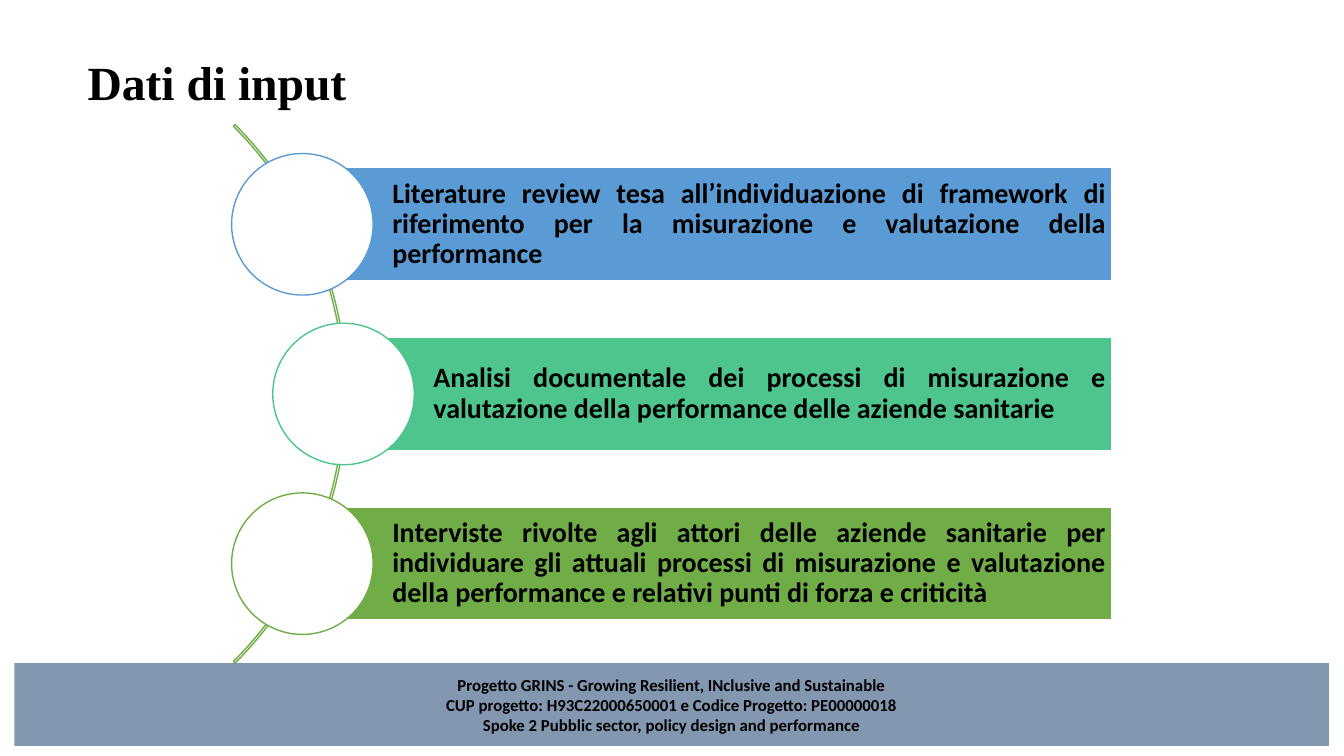
from pptx import Presentation
from pptx import util as u
from pptx.dml.color import RGBColor
from pptx.enum import shapes, text

COLUMNS, ROWS = 32, 18
MIDDLE_ROW, ROW_PITCH = 9.38, 4.04
BAR_RIGHT, BAR_HEIGHT, CIRCLE_SIZE = 26.47, 2.69, 3.37
ARC_CENTRE, ARC_SIZE = -0.82, 18.14

INPUTS = [
    ("Literature review tesa all’individuazione di framework di riferimento "
     "per la misurazione e valutazione della performance", "5B9BD5", 7.2),
    ("Analisi documentale dei processi di misurazione e valutazione della "
     "performance delle aziende sanitarie", "4DC58D", 8.18),
    ("Interviste rivolte agli attori delle aziende sanitarie per individuare "
     "gli attuali processi di misurazione e valutazione della performance e "
     "relativi punti di forza e criticità", "70AD47", 7.2),
]
FOOTER = [
    "Progetto GRINS - Growing Resilient, INclusive and Sustainable",
    "CUP progetto: H93C22000650001 e Codice Progetto: PE00000018",
    "Spoke 2 Pubblic sector, policy design and performance",
]


def colour(value):
    return RGBColor.from_string(value)


class SlideBuilder:
    """Draws styled elements on one slide, measured in grid columns and rows."""

    def __init__(self, presentation):
        self.column = presentation.slide_width / COLUMNS
        self.row = presentation.slide_height / ROWS
        self.slide = presentation.slides.add_slide(presentation.slide_layouts[6])

    def box(self, left, top, width, height):
        return (round(left * self.column), round(top * self.row),
                round(width * self.column), round(height * self.row))

    def shape(self, kind, area, fill=None, line=None):
        shape = self.slide.shapes.add_shape(kind, *self.box(*area))
        shape.shadow.inherit = False
        if fill:
            shape.fill.solid()
            shape.fill.fore_color.rgb = colour(fill)
        else:
            shape.fill.background()
        if line:
            shape.line.color.rgb = colour(line)
            shape.line.width = u.Pt(1)
        else:
            shape.line.fill.background()
        return shape

    def label(self, shape, lines, size, align, font="Calibri", spacing=1.0):
        frame = shape.text_frame
        frame.word_wrap = True
        frame.vertical_anchor = text.MSO_ANCHOR.MIDDLE
        for index, line in enumerate(lines):
            paragraph = frame.add_paragraph() if index else frame.paragraphs[0]
            paragraph.text = line
            paragraph.alignment = align
            paragraph.line_spacing = spacing
            paragraph.font.name = font
            paragraph.font.size = u.Pt(size)
            paragraph.font.bold = True
            paragraph.font.color.rgb = colour("000000")
        return frame

    def title(self, words, area):
        shape = self.slide.shapes.add_textbox(*self.box(*area))
        self.label(shape, [words], 34, text.PP_ALIGN.LEFT, "Times New Roman", 0.9)

    def arc(self, centre, middle, size, line):
        area = (centre - size / 2, middle - size / 2, size, size)
        arc = self.shape(shapes.MSO_SHAPE.BLOCK_ARC, area, line=line)
        for index, value in enumerate((189, 27, 0.003)):
            arc.adjustments[index] = value

    def input_bar(self, words, fill, left, middle):
        area = (left, middle - BAR_HEIGHT / 2, BAR_RIGHT - left, BAR_HEIGHT)
        bar = self.shape(shapes.MSO_SHAPE.RECTANGLE, area, fill, "FFFFFF")
        frame = self.label(bar, [words], 20, text.PP_ALIGN.JUSTIFY, spacing=0.9)
        frame.margin_left = round(2.14 * self.column)
        frame.margin_right = frame.margin_top = frame.margin_bottom = round(0.14 * self.column)
        radius = CIRCLE_SIZE / 2
        self.shape(shapes.MSO_SHAPE.OVAL,
                   (left - radius, middle - radius, CIRCLE_SIZE, CIRCLE_SIZE), "FFFFFF", fill)

    def footer(self, lines, area):
        band = self.shape(shapes.MSO_SHAPE.RECTANGLE, area, "8497B0")
        self.label(band, lines, 12, text.PP_ALIGN.CENTER)


def main():
    presentation = Presentation()
    presentation.slide_width = u.Inches(13.33)
    presentation.slide_height = u.Inches(7.5)
    builder = SlideBuilder(presentation)
    builder.title("Dati di input", (1.85, 0.53, 21.6, 3))
    builder.arc(ARC_CENTRE, MIDDLE_ROW, ARC_SIZE, "70AD47")
    for index, (words, fill, left) in enumerate(INPUTS):
        builder.input_bar(words, fill, left, MIDDLE_ROW + (index - 1) * ROW_PITCH)
    builder.footer(FOOTER, (0.34, 15.79, 31.3, 1.97))
    presentation.save("out.pptx")


if __name__ == "__main__":
    main()
